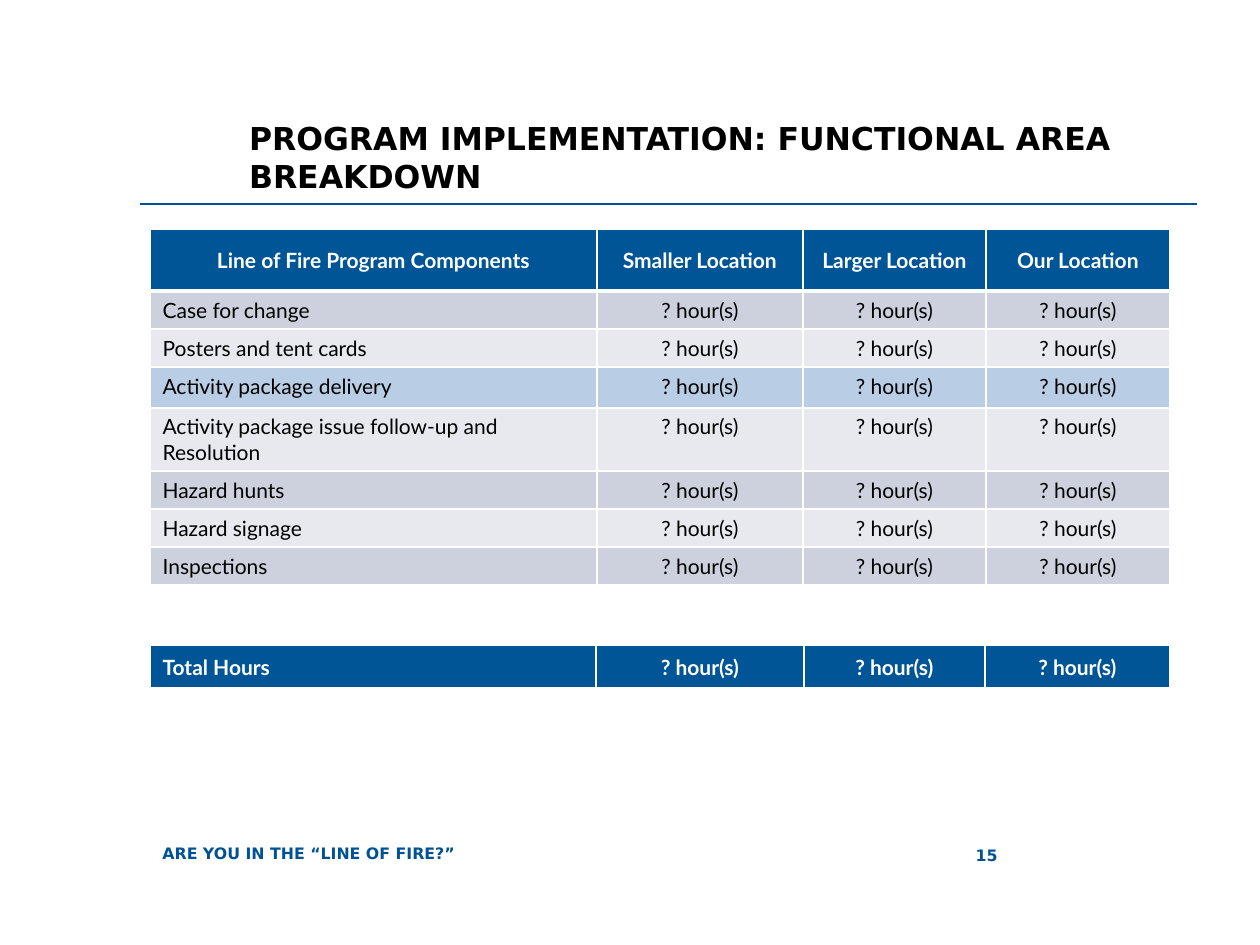
from lxml.etree import SubElement
from pptx import Presentation
from pptx.dml.color import RGBColor
from pptx.enum.shapes import MSO_CONNECTOR
from pptx.enum.text import MSO_ANCHOR, PP_ALIGN
from pptx.oxml.ns import qn
from pptx.util import Pt

EMU_PER_PX = 914400 / 126

BLUE = RGBColor(0x00, 0x52, 0x95)
TABLE_BLUE = RGBColor(0x00, 0x55, 0x96)
DARK_BAND = RGBColor(0xCC, 0xD1, 0xDD)
LIGHT_BAND = RGBColor(0xE7, 0xE9, 0xEF)
HIGHLIGHT = RGBColor(0xB9, 0xCD, 0xE5)
BLACK = RGBColor(0, 0, 0)
WHITE = RGBColor(0xFF, 0xFF, 0xFF)

HEADING_FONT = "DejaVu Sans"
TABLE_FONT = "Lato"
HOURS = ["? hour(s)"] * 3
HEADERS = ["Line of Fire Program Components", "Smaller Location",
           "Larger Location", "Our Location"]
COMPONENTS = [
    ("Case for change", 38, DARK_BAND),
    ("Posters and tent cards", 38, LIGHT_BAND),
    ("Activity package delivery", 41, HIGHLIGHT),
    ("Activity package issue follow-up and Resolution", 63, LIGHT_BAND),
    ("Hazard hunts", 38, DARK_BAND),
    ("Hazard signage", 38, LIGHT_BAND),
    ("Inspections", 38, DARK_BAND),
]


def px(length):
    return round(length * EMU_PER_PX)


def add_run(paragraph, text, font_name, size, color, bold):
    run = paragraph.add_run()
    run.text = text
    run.font.name = font_name
    run.font.size = Pt(size)
    run.font.bold = bold
    run.font.color.rgb = color


def add_heading_text(slide, box, text, size, color, anchor, align=PP_ALIGN.LEFT):
    shape = slide.shapes.add_textbox(*map(px, box))
    frame = shape.text_frame
    frame.word_wrap = True
    frame.vertical_anchor = anchor
    paragraph = frame.paragraphs[0]
    paragraph.alignment = align
    add_run(paragraph, text, HEADING_FONT, size, color, True)
    return frame


def set_borders(cell, top, bottom):
    """Draw white cell borders; widths are in points."""
    properties = cell._tc.get_or_add_tcPr()
    widths = {"a:lnL": 1, "a:lnR": 1, "a:lnT": top, "a:lnB": bottom}
    for position, (tag, width) in enumerate(widths.items()):
        line = SubElement(properties, qn(tag), w=str(Pt(width)))
        fill = SubElement(line, qn("a:solidFill"))
        SubElement(fill, qn("a:srgbClr"), val=str(WHITE))
        properties.insert(position, line)


def fill_row(table, row, texts, fill, borders, strong=False, first_align=PP_ALIGN.LEFT):
    for column, text in enumerate(texts):
        cell = table.cell(row, column)
        cell.fill.solid()
        cell.fill.fore_color.rgb = fill
        cell.vertical_anchor = MSO_ANCHOR.MIDDLE if strong else MSO_ANCHOR.TOP
        paragraph = cell.text_frame.paragraphs[0]
        paragraph.alignment = PP_ALIGN.CENTER if column else first_align
        add_run(paragraph, text, TABLE_FONT, 12, WHITE if strong else BLACK, strong)
        set_borders(cell, *borders)


def add_grid(slide, left, top, column_widths, row_heights):
    frame = slide.shapes.add_table(
        len(row_heights), len(column_widths), px(left), px(top),
        px(sum(column_widths)), px(sum(row_heights)))
    table = frame.table
    table.horz_banding = False
    for column, width in zip(table.columns, column_widths):
        column.width = px(width)
    for row, height in zip(table.rows, row_heights):
        row.height = px(height)
    return table


def add_header(slide, left, top, width, height):
    # Rule under the title
    rule_y = px(top + height - 10)
    rule = slide.shapes.add_connector(
        MSO_CONNECTOR.STRAIGHT, px(left), rule_y, px(left + width), rule_y)
    rule.line.color.rgb = BLUE
    rule.line.width = Pt(1)
    SubElement(rule._element.spPr, qn("a:effectLst"))

    # Title
    frame = add_heading_text(
        slide, (left + 109, top, 950, height),
        "PROGRAM IMPLEMENTATION: FUNCTIONAL AREA BREAKDOWN",
        18, BLACK, MSO_ANCHOR.TOP)
    frame.margin_left = 0


def add_components_table(slide, left, top):
    heights = [62] + [height for _, height, _ in COMPONENTS]
    table = add_grid(slide, left, top, [447, 206, 183, 184], heights)
    fill_row(table, 0, HEADERS, TABLE_BLUE, (1, 3), True, PP_ALIGN.CENTER)
    for row, (name, _, fill) in enumerate(COMPONENTS, start=1):
        borders = (3 if row == 1 else 1, 1)
        fill_row(table, row, [name] + HOURS, fill, borders)


def add_total_table(slide, left, top):
    table = add_grid(slide, left, top, [446, 208, 181, 185], [44])
    fill_row(table, 0, ["Total Hours"] + HOURS, TABLE_BLUE, (1, 3), True)


def add_footer(slide, left, top):
    add_heading_text(slide, (left, top, 698, 47), "ARE YOU IN THE “LINE OF FIRE?”",
                     9, BLUE, MSO_ANCHOR.MIDDLE)
    add_heading_text(slide, (left + 733, top, 127, 50), "15",
                     9, BLUE, MSO_ANCHOR.MIDDLE, PP_ALIGN.RIGHT)


def main():
    presentation = Presentation()
    presentation.slide_width = px(1260)
    presentation.slide_height = px(945)
    slide = presentation.slides.add_slide(presentation.slide_layouts[6])

    add_header(slide, 140, 113, 1057, 101)
    add_components_table(slide, 150, 229)
    add_total_table(slide, 150, 645)
    add_footer(slide, 150, 830)

    presentation.save("out.pptx")


if __name__ == "__main__":
    main()
